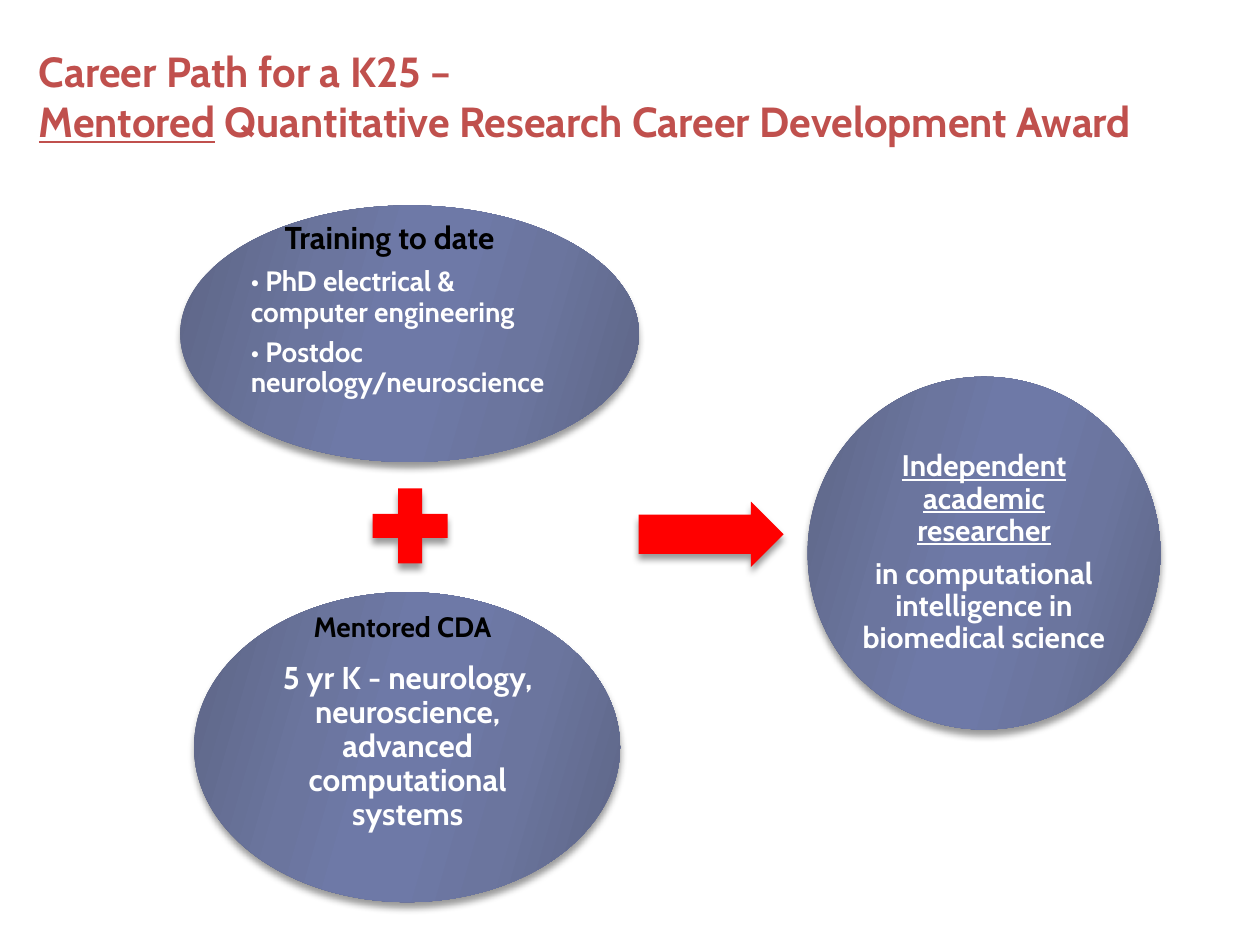
from dataclasses import dataclass

from lxml import etree
from pptx import Presentation
from pptx import util as u
from pptx.dml.color import RGBColor
from pptx.enum import shapes, text
from pptx.oxml import parse_xml
from pptx.oxml.ns import nsdecls, qn


@dataclass(frozen=True)
class Theme:
    font: str = "Cabin"
    title: str = "C0504D"
    heading: str = "000000"
    body: str = "FFFFFF"
    sign: str = "FF0000"
    shadow: str = "000000"
    gradient: tuple = ((0, "5D6585"), (30, "6B759E"), (45, "6E79A7"),
                       (55, "6E79A7"), (73, "6B759E"), (100, "5D6585"))
    title_size: int = 24
    large: int = 18
    medium: int = 17
    small: int = 16


theme = Theme()
SHAPE = shapes.MSO_SHAPE
LEFT, CENTER = text.PP_ALIGN.LEFT, text.PP_ALIGN.CENTER

deck = Presentation()
deck.slide_width, deck.slide_height = u.Pt(720), u.Pt(540)
slide = deck.slides.add_slide(deck.slide_layouts[6])


def add_figure(kind, place):
    figure = slide.shapes.add_shape(kind, *map(u.Pt, place))
    figure.line.fill.background()
    figure.shadow.inherit = False
    effects = figure._element.spPr.find(qn("a:effectLst"))
    shadow = etree.SubElement(effects, qn("a:outerShdw"), blurRad=str(u.Pt(4)),
                              dist=str(u.Pt(3.4)), dir="5400000", rotWithShape="0")
    color = etree.SubElement(shadow, qn("a:srgbClr"), val=theme.shadow)
    etree.SubElement(color, qn("a:alpha"), val="40000")
    return figure


def add_text(place, paragraphs, size, color, align=LEFT, inset=None):
    box = slide.shapes.add_textbox(*map(u.Pt, place))
    frame = box.text_frame
    frame.word_wrap = True
    if inset is not None:
        frame.vertical_anchor = text.MSO_ANCHOR.MIDDLE
        frame.margin_left = frame.margin_right = u.Pt(inset)
        frame.margin_top = frame.margin_bottom = u.Pt(inset)
    for index, spans in enumerate(paragraphs):
        para = frame.paragraphs[0] if index == 0 else frame.add_paragraph()
        para.alignment = align
        para.font.name, para.font.size, para.font.bold = theme.font, u.Pt(size), True
        para.font.color.rgb = RGBColor.from_string(color)
        if inset is not None:
            para.line_spacing = 0.9
            para.space_after = u.Pt(round(size * 0.37, 1))
        for words, underlined in spans:
            span = para.add_run()
            span.text = words
            if underlined:
                span.font.underline = True


stops = "".join(f'<a:gs pos="{position * 1000}"><a:srgbClr val="{color}"/></a:gs>'
                for position, color in theme.gradient)
for place in ((103, 117.4, 262.1, 146.6), (110.9, 338.4, 243.4, 177.1),
              (461.5, 215.3, 201.6, 201.6)):
    oval = add_figure(SHAPE.OVAL, place)
    oval._element.spPr.find(qn("a:prstGeom")).addnext(parse_xml(
        f'<a:gradFill {nsdecls("a")} rotWithShape="1"><a:gsLst>{stops}</a:gsLst>'
        '<a:lin ang="960000" scaled="0"/></a:gradFill>'))

plus = add_figure(SHAPE.MATH_PLUS, (205.2, 271.4, 58.3, 58.3))
arrow = add_figure(SHAPE.RIGHT_ARROW, (365, 286.6, 82.8, 37.4))
arrow.adjustments[0] = 0.6
for sign in (plus, arrow):
    sign.fill.solid()
    sign.fill.fore_color.rgb = RGBColor.from_string(theme.sign)

add_text((141.8, 139, 185, 103),
         [[("• PhD electrical & computer engineering", False)],
          [("• Postdoc neurology/neuroscience", False)]],
         theme.small, theme.body, inset=1.6)
add_text((146.9, 364.3, 172.1, 125.3),
         [[("5 yr K - neurology, neuroscience, advanced computational systems", False)]],
         theme.large, theme.body, CENTER, inset=1.8)
add_text((491, 244.8, 142.6, 142.6),
         [[("Independent academic researcher", True)],
          [("in computational intelligence in biomedical science", False)]],
         theme.medium, theme.body, CENTER, inset=1.7)
add_text((15.1, 22.3, 704.9, 65.5),
         [[("Career Path for a K25 –", False)],
          [("Mentored", True), (" Quantitative Research Career Development Award", False)]],
         theme.title_size, theme.title)
add_text((155.5, 121, 154.8, 28.8), [[("Training to date", False)]],
         theme.large, theme.heading)
add_text((172.1, 344.9, 132.5, 26.6), [[("Mentored CDA", False)]],
         theme.small, theme.heading)

deck.save("out.pptx")
